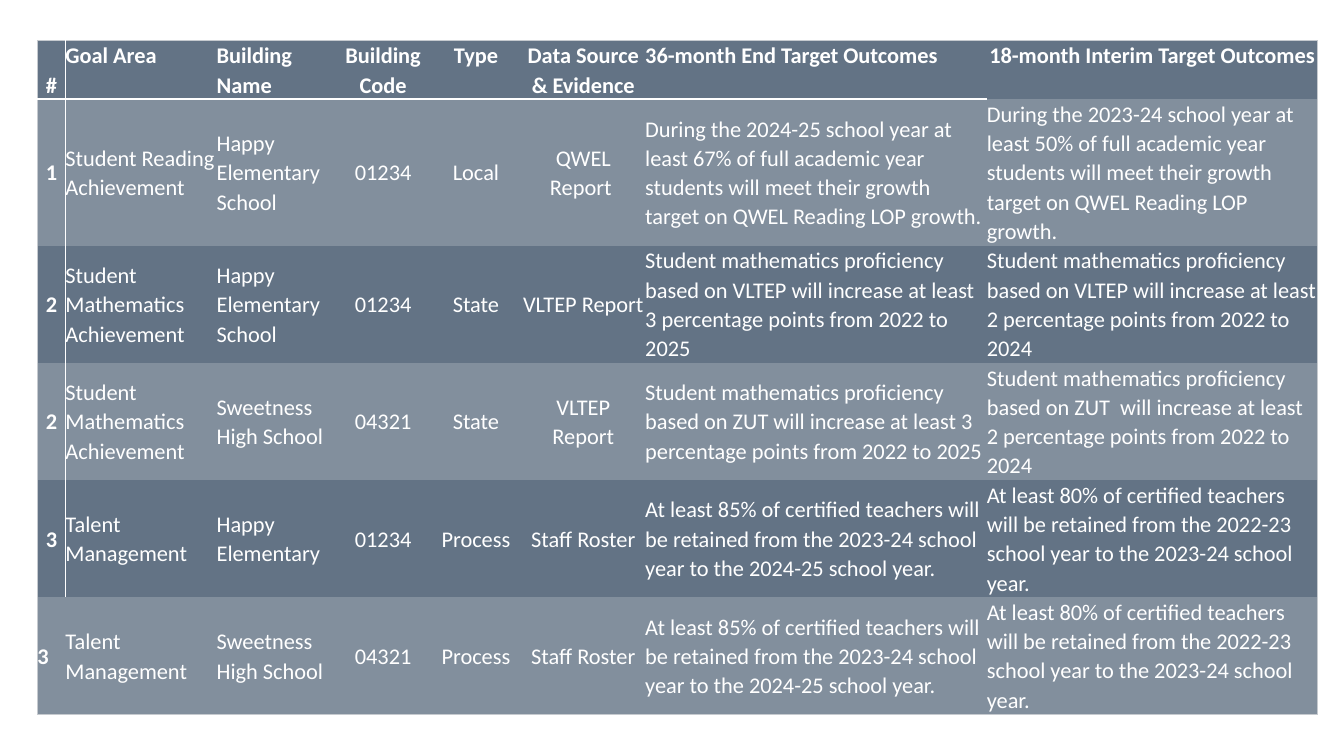
from dataclasses import dataclass

import lxml.etree
import pptx
import pptx.dml.color
import pptx.enum.text
import pptx.oxml.ns
import pptx.util

Cm = pptx.util.Cm
ALIGN = pptx.enum.text.PP_ALIGN
ANCHOR = pptx.enum.text.MSO_ANCHOR

COLORS = {"dark": "637385", "light": "828F9D", "text": "FFFFFF", "rule": "FFFFFF", "frame": "C6CACF"}
NO_GRID_STYLE = "{2D5ABB26-0587-4C30-8999-92F81FD0307C}"
NO_BREAK_SPACE = chr(160)
CELL_FORMAT = {"margin_left": 0, "margin_right": 0, "margin_top": 0, "margin_bottom": 0}
FONT_FORMAT = {"name": "Calibri", "size": pptx.util.Pt(16)}
TABLE_FORMAT = {"first_row": False, "horz_banding": False}


@dataclass
class Column:
    heading: str
    width: float
    align: ALIGN = ALIGN.LEFT
    heading_align: ALIGN = ALIGN.LEFT
    anchor: ANCHOR = ANCHOR.MIDDLE


@dataclass
class Goal:
    height: float
    entries: tuple[str, ...]


@dataclass
class Border:
    side: str
    color: str
    points: float


COLUMNS = [
    Column("#", 0.71, ALIGN.CENTER, ALIGN.CENTER),
    Column("Goal Area", 3.81),
    Column("Building Name", 3.0),
    Column("Building Code", 2.39, ALIGN.CENTER, ALIGN.CENTER),
    Column("Type", 2.29, ALIGN.CENTER, ALIGN.CENTER),
    Column("Data Source & Evidence", 3.12, ALIGN.CENTER, ALIGN.CENTER),
    Column("36-month End Target Outcomes", 8.61),
    Column("18-month Interim Target Outcomes", 8.33, ALIGN.LEFT, ALIGN.CENTER, ANCHOR.TOP),
]

READING = ("During the {} school year at least {}% of full academic year students "
           "will meet their growth target on QWEL Reading LOP growth.")
# "2022 to" stays on one line
MATHEMATICS = ("Student mathematics proficiency based on {} will increase at least {} "
               f"percentage points from 2022{NO_BREAK_SPACE}to {{}}")
RETENTION = ("At least {}% of certified teachers will be retained from the {} school year "
             "to the {} school year.")
RETENTION_TARGETS = (RETENTION.format(85, "2023-24", "2024-25"),
                     RETENTION.format(80, "2022-23", "2023-24"))

GOALS = [
    Goal(2.18, ("1", "Student Reading Achievement", "Happy Elementary School", "01234", "Local",
                f"QWEL Report{NO_BREAK_SPACE}", READING.format("2024-25", 67),
                READING.format("2023-24", 50))),
    Goal(1.73, ("2", "Student Mathematics Achievement", "Happy Elementary School", "01234", "State",
                "VLTEP Report", MATHEMATICS.format("VLTEP", 3, 2025),
                MATHEMATICS.format("VLTEP", 2, 2024))),
    Goal(1.75, ("2", "Student Mathematics Achievement", "Sweetness High School", "04321", "State",
                "VLTEP\nReport", MATHEMATICS.format("ZUT", 3, 2025),
                MATHEMATICS.format("ZUT ", 2, 2024))),
    Goal(1.75, ("3", "Talent Management", "Happy Elementary", "01234", "Process",
                "Staff Roster", *RETENTION_TARGETS)),
    Goal(1.75, ("3", "Talent Management", "Sweetness High School", "04321", "Process",
                "Staff Roster", *RETENTION_TARGETS)),
]
HEADING = Goal(1.32, tuple(column.heading for column in COLUMNS))


def apply_format(target: object, values: dict) -> None:
    for attribute, value in values.items():
        setattr(target, attribute, value)


def rgb(name: str) -> pptx.dml.color.RGBColor:
    return pptx.dml.color.RGBColor.from_string(COLORS[name])


def borders_for(row: int, col: int) -> list[Border]:
    """Outer frame, rule beside the numbers and rule under the headings."""
    last_row, last_col = len(GOALS), len(COLUMNS) - 1
    rules = [
        (col == 0, Border("L", "frame", 0.75)),
        (col == 0 and row < last_row, Border("R", "rule", 1)),
        (col == last_col, Border("R", "frame", 0.75)),
        (row == 0, Border("T", "frame", 0.75)),
        (row == 0 and col < last_col, Border("B", "rule", 1.5)),
        (row == last_row, Border("B", "frame", 0.75)),
    ]
    return [border for applies, border in rules if applies]


def draw_border(cell: object, border: Border) -> None:
    qn = pptx.oxml.ns.qn
    line = lxml.etree.SubElement(cell._tc.get_or_add_tcPr(), qn(f"a:ln{border.side}"),
                                 w=str(pptx.util.Pt(border.points)))
    fill = lxml.etree.SubElement(line, qn("a:solidFill"))
    lxml.etree.SubElement(fill, qn("a:srgbClr"), val=COLORS[border.color])


def draw_cell(cell: object, text: str, row: int, col: int) -> None:
    column = COLUMNS[col]
    align = column.align if row else column.heading_align
    anchor = column.anchor if row else ANCHOR.TOP
    if col == 0 and row == 0:
        anchor = ANCHOR.BOTTOM
    if col == 0 and row == len(GOALS):
        align = ALIGN.LEFT

    for border in borders_for(row, col):
        draw_border(cell, border)
    cell.fill.solid()
    cell.fill.fore_color.rgb = rgb("light" if row % 2 else "dark")
    apply_format(cell, CELL_FORMAT | {"vertical_anchor": anchor})

    cell.text = text
    for paragraph in cell.text_frame.paragraphs:
        apply_format(paragraph, {"alignment": align, "line_spacing": 1.07})
        for run in paragraph.runs:
            apply_format(run.font, FONT_FORMAT | {"bold": row == 0 or col == 0})
            run.font.color.rgb = rgb("text")


def draw_goals(slide: object) -> None:
    rows = [HEADING, *GOALS]
    frame = slide.shapes.add_table(len(rows), len(COLUMNS), Cm(0.94), Cm(1.02), Cm(32.28), Cm(16.48))
    goals = frame.table
    apply_format(goals, TABLE_FORMAT)
    goals._tbl.tblPr.find(pptx.oxml.ns.qn("a:tableStyleId")).text = NO_GRID_STYLE

    for col, column in enumerate(COLUMNS):
        goals.columns[col].width = Cm(column.width)
    for row, goal in enumerate(rows):
        goals.rows[row].height = Cm(goal.height)
        for col, text in enumerate(goal.entries):
            draw_cell(goals.cell(row, col), text, row, col)


def main() -> None:
    deck = pptx.Presentation()
    apply_format(deck, {"slide_width": Cm(33.87), "slide_height": Cm(19.05)})
    draw_goals(deck.slides.add_slide(deck.slide_layouts[6]))
    deck.save("out.pptx")


if __name__ == "__main__":
    main()
